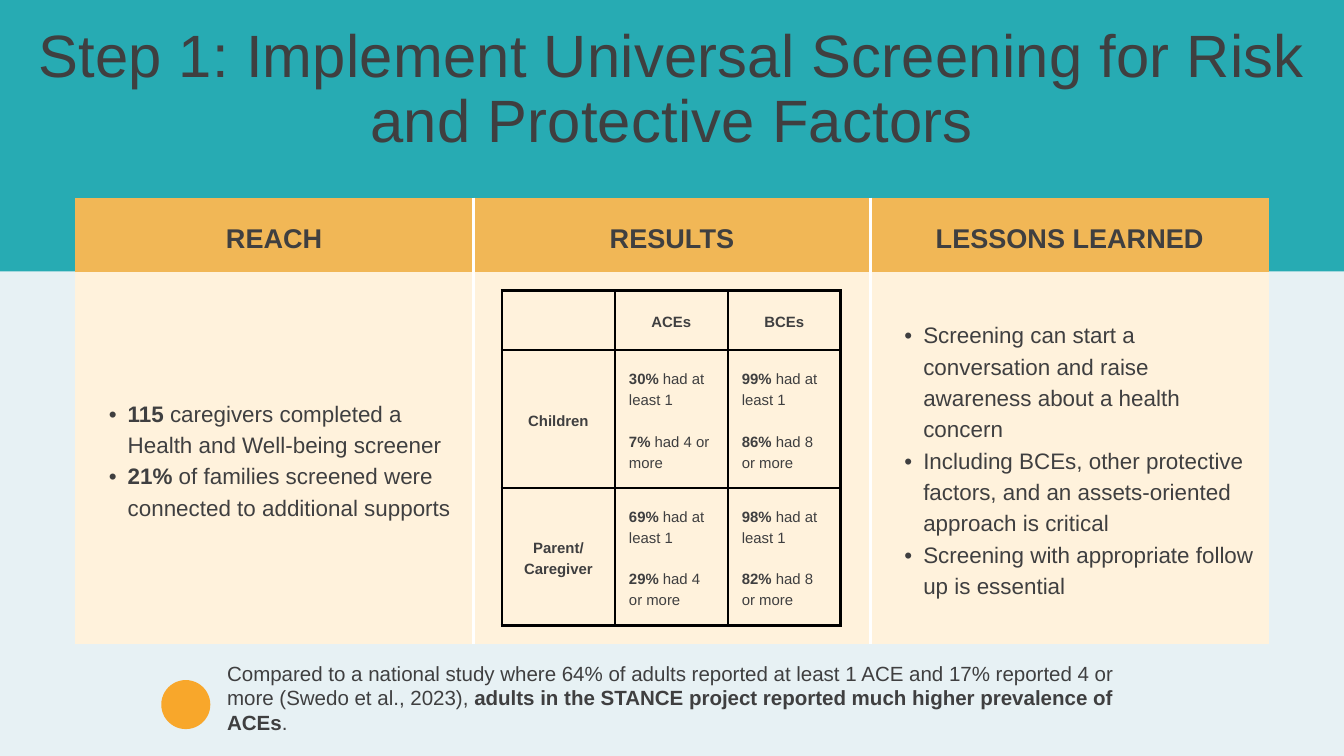
import dataclasses
from typing import Optional

import lxml.etree
import pptx
import pptx.dml.color
import pptx.enum.shapes
import pptx.enum.text
import pptx.oxml.ns
import pptx.util

Inches = pptx.util.Inches
Pt = pptx.util.Pt
ALIGN = pptx.enum.text.PP_ALIGN
SHAPE = pptx.enum.shapes.MSO_SHAPE
qn = pptx.oxml.ns.qn

COLORS = {
    "background": "E7F1F4",
    "band": "27ABB3",
    "header": "F1B756",
    "body": "FFF2DC",
    "dot": "F8A72B",
    "text": "3F3F40",
    "divider": "FFFFFF",
    "grid": "000000",
}
FONT = "Arial"


@dataclasses.dataclass
class Span:
    text: str
    bold: bool = False


@dataclasses.dataclass
class Style:
    size: float
    line: float
    align: object = ALIGN.LEFT
    bullet: bool = False
    gap: float = 0


@dataclasses.dataclass
class Cell:
    paragraphs: list[list[Span]]
    style: Style


HEADER = Style(29, 40.6, ALIGN.CENTER)
BULLETS = Style(24, 33.6, bullet=True)
LABEL = Style(16, 22.4, ALIGN.CENTER)
FINDING = Style(16, 22.4, gap=22.4)
TITLE = Style(64, 70.4, ALIGN.CENTER)
NOTE = Style(22, 26.4)


def heading(text: str, style: Style) -> Cell:
    return Cell([[Span(text, True)]], style)


def finding(*shares: tuple[str, str]) -> Cell:
    """Cell with one paragraph per share: bold percentage, then its meaning."""
    return Cell([[Span(share, True), Span(f" {meaning}")] for share, meaning in shares],
                FINDING)


SUMMARY = [
    [heading(text, HEADER) for text in ("REACH", "RESULTS", "LESSONS LEARNED")],
    [
        Cell([
            [Span("115", True),
             Span(" caregivers completed a Health and Well-being screener")],
            [Span("21%", True),
             Span(" of families screened were connected to additional supports")],
        ], BULLETS),
        None,
        Cell([
            [Span("Screening can start a conversation and raise awareness "
                  "about a health concern")],
            [Span("Including BCEs, other protective factors, and an "
                  "assets-oriented approach is critical")],
            [Span("Screening with appropriate follow up is essential")],
        ], BULLETS),
    ],
]
RESULTS = [
    [None, heading("ACEs", LABEL), heading("BCEs", LABEL)],
    [
        heading("Children", LABEL),
        finding(("30%", "had at least 1"), ("7%", "had 4 or more")),
        finding(("99%", "had at least 1"), ("86%", "had 8 or more")),
    ],
    [
        heading("Parent/ Caregiver", LABEL),
        finding(("69%", "had at least 1"), ("29%", "had 4 or more")),
        finding(("98%", "had at least 1"), ("82%", "had 8 or more")),
    ],
]


def rgb(name: str) -> pptx.dml.color.RGBColor:
    return pptx.dml.color.RGBColor.from_string(COLORS[name])


def write(frame, paragraphs: list[list[Span]], style: Style) -> None:
    for index, spans in enumerate(paragraphs):
        para = frame.add_paragraph() if index else frame.paragraphs[0]
        para.alignment = style.align
        para.line_spacing = Pt(style.line)
        para.space_before = Pt(style.gap if index else 0)
        if style.bullet:
            add_bullet(para)
        for span in spans:
            run = para.add_run()
            run.text = span.text
            run.font.name = FONT
            run.font.size = Pt(style.size)
            run.font.bold = span.bold
            run.font.color.rgb = rgb("text")


def add_bullet(para) -> None:
    para.level = 1
    properties = para._p.get_or_add_pPr()
    properties.set("marL", str(Inches(0.57)))
    properties.set("indent", str(Inches(-0.28)))
    lxml.etree.SubElement(properties, qn("a:buFont"), typeface=FONT)
    lxml.etree.SubElement(properties, qn("a:buChar"), char="•")


def set_borders(cell, widths: dict[str, float], color: str) -> None:
    """Draw the sides L, R, T and B at these widths in points; 0 hides a side."""
    properties = cell._tc.get_or_add_tcPr()
    for side in "LRTB":
        width = widths.get(side, 0)
        line = lxml.etree.SubElement(properties, qn(f"a:ln{side}"), w=str(Pt(width)))
        if width:
            fill = lxml.etree.SubElement(line, qn("a:solidFill"))
            lxml.etree.SubElement(fill, qn("a:srgbClr"), val=COLORS[color])
        else:
            lxml.etree.SubElement(line, qn("a:noFill"))


def add_grid(page, left: float, top: float, column: float, heights: list[float],
             rows: list[list[Optional[Cell]]]):
    """Add an unstyled table with equal columns and fill in its text."""
    count = len(rows[0])
    table = page.shapes.add_table(
        len(rows), count, Inches(left), Inches(top),
        Inches(column * count), Inches(sum(heights))).table
    table.first_row = table.horz_banding = False
    for item in table.columns:
        item.width = Inches(column)
    for item, height in zip(table.rows, heights):
        item.height = Inches(height)
    for r, row in enumerate(rows):
        for c, content in enumerate(row):
            if content:
                cell = table.cell(r, c)
                cell.vertical_anchor = pptx.enum.text.MSO_ANCHOR.MIDDLE
                cell.margin_left = cell.margin_right = Inches(0.21)
                cell.margin_top = cell.margin_bottom = Inches(0.21)
                write(cell.text_frame, content.paragraphs, content.style)
    return table


def add_filled(page, kind, left: float, top: float, width: float, height: float,
               color: str):
    shape = page.shapes.add_shape(
        kind, Inches(left), Inches(top), Inches(width), Inches(height))
    shape.shadow.inherit = False
    shape.fill.solid()
    shape.fill.fore_color.rgb = rgb(color)
    shape.line.fill.background()
    return shape


def prepare_frame(frame) -> None:
    frame.word_wrap = True
    frame.auto_size = pptx.enum.text.MSO_AUTO_SIZE.NONE
    frame.vertical_anchor = pptx.enum.text.MSO_ANCHOR.TOP
    frame.margin_left = frame.margin_right = frame.margin_top = frame.margin_bottom = 0


def main() -> None:
    deck = pptx.Presentation()
    deck.slide_width, deck.slide_height = Inches(20), Inches(11.25)
    page = deck.slides.add_slide(deck.slide_layouts[5])
    page.background.fill.solid()
    page.background.fill.fore_color.rgb = rgb("background")

    title = page.shapes.title
    title.left, title.top = Inches(0), Inches(0.35)
    title.width, title.height = Inches(20), Inches(1.96)
    prepare_frame(title.text_frame)
    write(title.text_frame, [[Span(
        "Step 1: Implement Universal Screening for Risk and Protective Factors")]], TITLE)
    title.text_frame.paragraphs[0].runs[0].font._element.set("spc", "30")
    band = add_filled(page, SHAPE.RECTANGLE, 0, 0, 20, 4.04, "band")
    title.element.addprevious(band.element)

    summary = add_grid(page, 1.12, 2.94, 5.92, [1.11, 5.54], SUMMARY)
    for r, color in enumerate(("header", "body")):
        for c in range(3):
            cell = summary.cell(r, c)
            set_borders(cell, {"L": 3.75 * (c > 0), "R": 3.75 * (c < 2)}, "divider")
            cell.fill.solid()
            cell.fill.fore_color.rgb = rgb(color)

    results = add_grid(page, 7.47, 4.32, 1.68, [0.89, 2.05, 2.05], RESULTS)
    for cell in results.iter_cells():
        set_borders(cell, dict.fromkeys("LRTB", 3), "grid")
        cell.fill.background()

    note = page.shapes.add_textbox(Inches(3.38), Inches(9.83), Inches(13.24), Inches(1.09))
    prepare_frame(note.text_frame)
    write(note.text_frame, [[
        Span("Compared to a national study where 64% of adults reported at least 1 ACE "
             "and 17% reported 4 or more (Swedo et al., 2023), "),
        Span("adults in the STANCE project reported much higher prevalence of ACEs", True),
        Span("."),
    ]], NOTE)
    add_filled(page, SHAPE.OVAL, 2.4, 10.12, 0.73, 0.73, "dot")
    deck.save("out.pptx")


if __name__ == "__main__":
    main()
